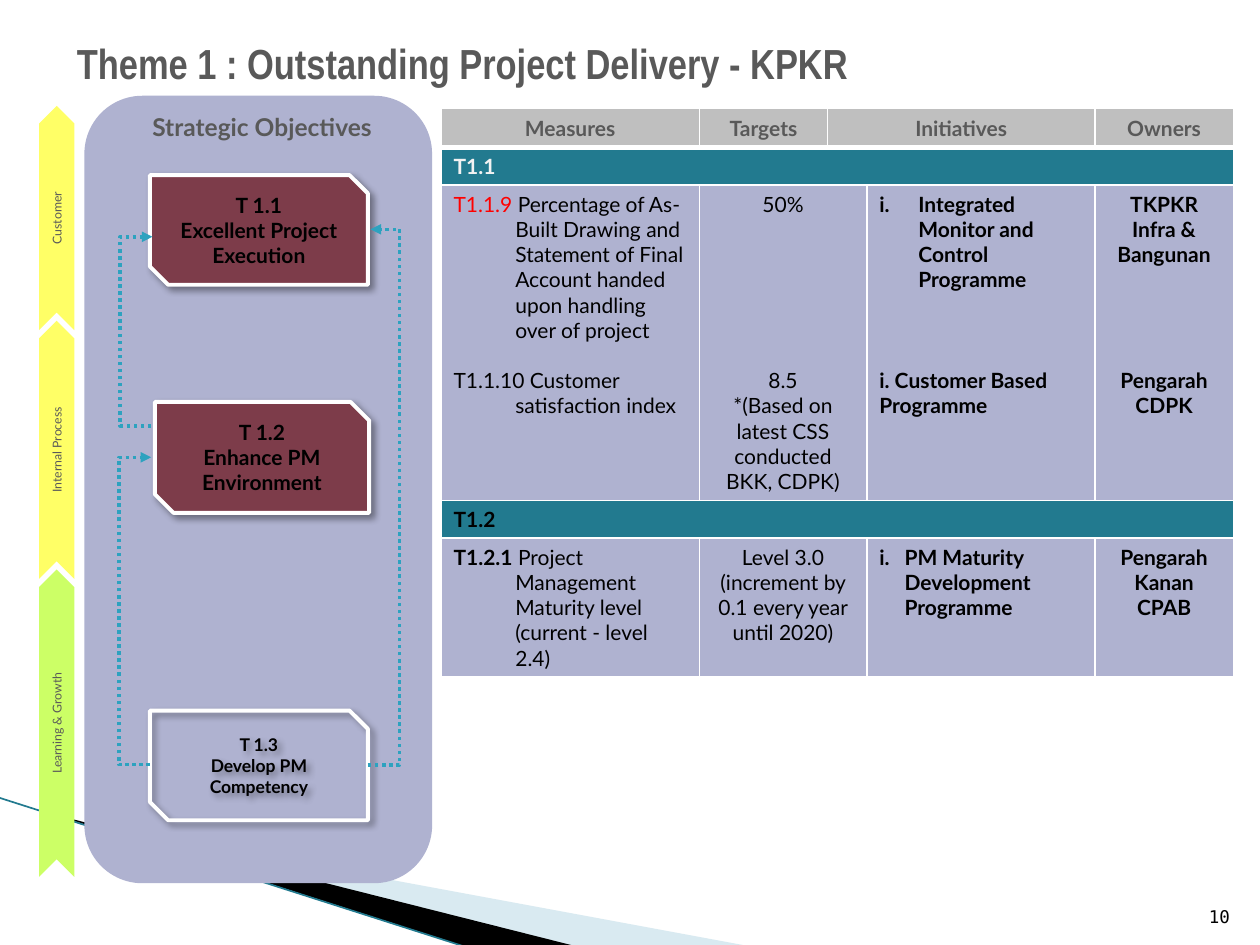
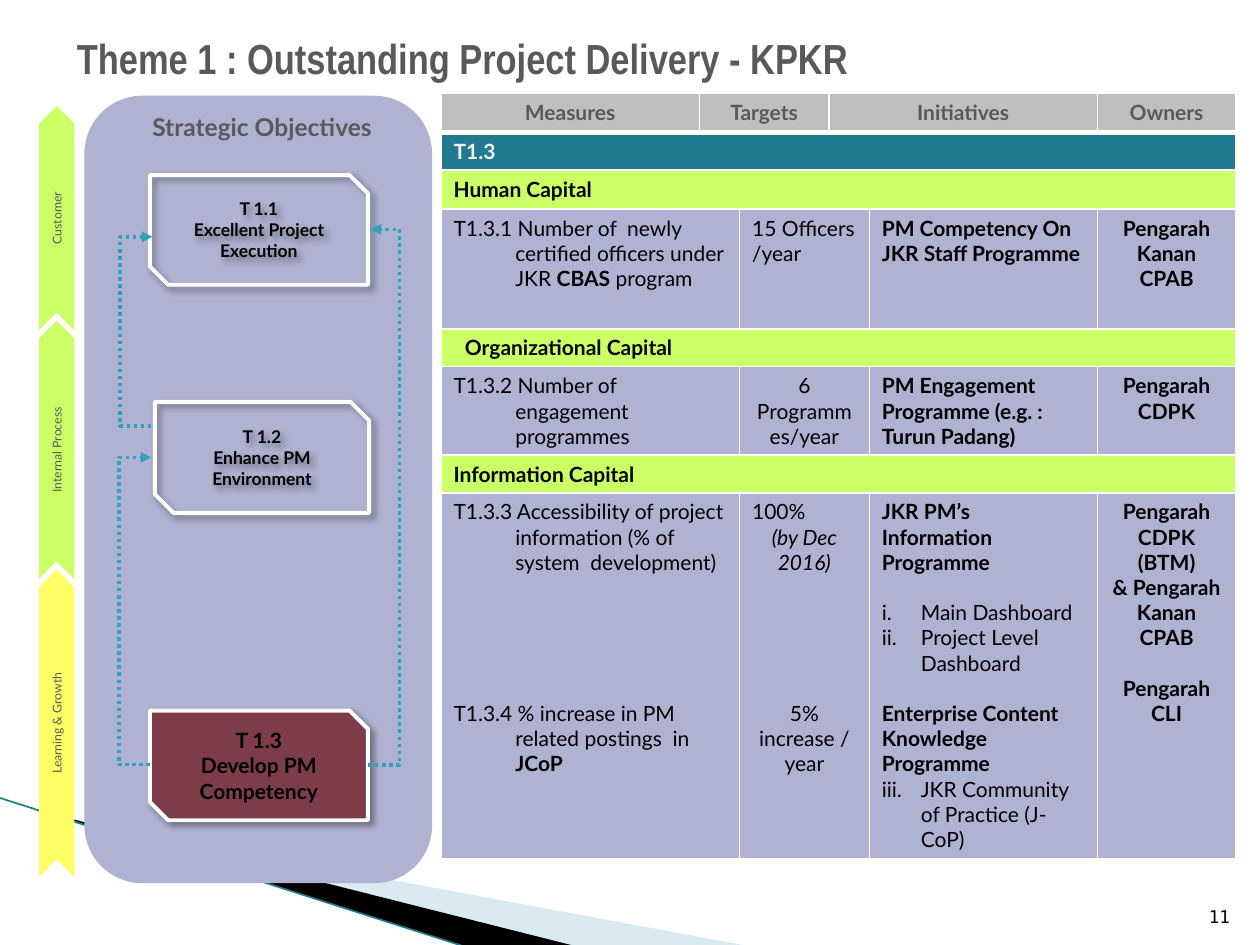
from dataclasses import dataclass

from lxml.etree import SubElement
from pptx import Presentation
from pptx.dml.color import RGBColor
from pptx.enum.dml import MSO_LINE
from pptx.enum.shapes import MSO_CONNECTOR, MSO_SHAPE
from pptx.enum.text import MSO_ANCHOR, MSO_AUTO_SIZE, PP_ALIGN
from pptx.oxml.ns import qn
from pptx.util import Inches, Pt

COLORS = {
    "white": "FFFFFF", "black": "000000", "grey": "595959", "pale": "F2F2F2",
    "red": "FF0000", "header": "BFBFBF", "theme": "227A8F", "group": "CCFF66",
    "body": "AFB2D0", "active": "7D3C4A", "yellow": "FFFF66", "green": "CCFF66",
    "arrow": "2DA2BF", "sweep": "A0CBDC",
}
FONT, TITLE_FONT, NUMBER_FONT = "Lato", "Arial Narrow", "DejaVu Sans Mono"
LEFT, CENTER, RIGHT = PP_ALIGN.LEFT, PP_ALIGN.CENTER, PP_ALIGN.RIGHT
LINE_HEIGHT = 14.4
TITLE = "Theme 1 : Outstanding Project Delivery - KPKR"
PANEL_TITLE = "Strategic Objectives"


@dataclass
class Line:
    runs: list
    align: object = LEFT
    hang: float = 0
    margin: float = 0
    gap: int = 0
    number: int = 0


def measure(*runs, gap=0):
    return Line([run if isinstance(run, tuple) else (run, "") for run in runs], hang=0.49, gap=gap)


def plain(text, align=CENTER, gap=0, style=""):
    return Line([(text, style)], align, gap=gap)


def strong(text, align=LEFT, gap=0):
    return plain(text, align, gap, "bold")


def numbered(text, number=1, hang=0.31, gap=0, style=""):
    return Line([(text, style)], hang=hang, gap=gap, number=number)


def band(text, color="black", margin=0):
    return [Line([(text, "bold " + color)], margin=margin)]


HEADINGS = [[plain(name, style="bold grey")] for name in ("Measures", "Targets", "Initiatives", "Owners")]

OBJECTIVES = [
    ("T 1.1", "Excellent Project Execution", (1.19, 1.39, 1.73, 0.87)),
    ("T 1.2", "Enhance PM Environment", (1.23, 3.19, 1.7, 0.88)),
    ("T 1.3", "Develop PM Competency", (1.19, 5.64, 1.73, 0.87)),
]
PERSPECTIVES = [
    ("Customer", 1.73, 1.78),
    ("Internal Process", 3.57, 2.05),
    ("Learning & Growth", 5.74, 2.44),
]
LINKS = [
    ((1.2, 3.38), (1.21, 1.88), 0.95),
    ((2.92, 6.07), (2.94, 1.82), 3.17),
    ((1.19, 6.07), (1.2, 3.63), 0.94),
]
SWEEPS = [
    ("sweep", 40, [(0.55, 6.51), (5.95, 7.51), (4.56, 7.51), (0.55, 6.5)]),
    ("black", 100, [(0.53, 6.49), (4.57, 7.51), (3.72, 7.52), (0.54, 6.5)]),
]

SLIDES = [
    {
        "number": "10", "title_top": 0.25, "table_top": 0.86, "active": {0, 1},
        "columns": [2.05, 1.02, 0.31, 1.81, 1.1],
        "rows": [
            ("header", 0.31, [1, 1, 2, 1], HEADINGS),
            ("theme", 0.29, [5], [band("T1.1", "pale")]),
            ("body", 2.5, [1, 2, 1, 1], [
                [measure(("T1.1.9 ", "red"), "Percentage of As-Built Drawing and Statement of Final "
                         "Account handed upon handling over of project"),
                 measure("T1.1.10 Customer satisfaction index", gap=1)],
                [plain("50%"), plain("8.5", gap=6),
                 plain("*(Based on latest CSS conducted BKK, CDPK)")],
                [numbered("Integrated Monitor and Control Programme", style="bold"),
                 strong("i. Customer Based Programme", gap=3)],
                [strong("TKPKR Infra & Bangunan", CENTER), strong("Pengarah CDPK", CENTER, 4)],
            ]),
            ("theme", 0.3, [5], [band("T1.2")]),
            ("body", 1.09, [1, 2, 1, 1], [
                [measure(("T1.2.1", "bold"), " Project Management Maturity level (current - level 2.4)")],
                [plain("Level 3.0"), plain("(increment by 0.1 every year until 2020)")],
                [numbered("PM Maturity Development Programme", hang=0.2, style="bold")],
                [strong("Pengarah Kanan CPAB", CENTER)],
            ]),
        ],
    },
    {
        "number": "11", "title_top": 0.21, "table_top": 0.74, "active": {2},
        "columns": [2.05, 0.32, 0.71, 0.32, 1.81, 1.1],
        "rows": [
            ("header", 0.31, [1, 2, 2, 1], HEADINGS),
            ("theme", 0.29, [6], [band("T1.3", "pale")]),
            ("group", 0.31, [6], [band("Human Capital")]),
            ("body", 0.95, [2, 2, 1, 1], [
                [measure("T1.3.1 Number of  newly certified officers under JKR ",
                         ("CBAS", "bold"), " program")],
                [plain("15 Officers /year", LEFT)],
                [strong("PM Competency On JKR Staff Programme")],
                [strong("Pengarah Kanan CPAB", CENTER)],
            ]),
            ("group", 0.3, [6], [band("Organizational Capital", margin=0.09)]),
            ("body", 0.7, [2, 2, 1, 1], [
                [measure("T1.3.2 Number of engagement programmes")],
                [plain("6 Programmes/year")],
                [strong("PM Engagement Programme (e.g. : Turun Padang)")],
                [strong("Pengarah CDPK", CENTER)],
            ]),
            ("group", 0.3, [6], [band("Information Capital")]),
            ("body", 2.9, [2, 2, 1, 1], [
                [measure("T1.3.3 Accessibility of project information (% of system  development)"),
                 measure("T1.3.4 % increase in PM related postings  in ", ("JCoP", "bold"), gap=5)],
                [plain("100%", LEFT), plain("(by Dec 2016)", style="italic"),
                 plain("5% increase / year", gap=5)],
                [strong("JKR PM’s Information Programme"),
                 numbered("Main Dashboard", gap=1), numbered("Project Level Dashboard"),
                 strong("Enterprise Content Knowledge Programme", gap=1),
                 numbered("JKR Community of Practice (J-CoP)", 3)],
                [strong("Pengarah CDPK (BTM)", CENTER), strong("& Pengarah Kanan CPAB", CENTER),
                 strong("Pengarah CLI", CENTER, 1)],
            ]),
        ],
    },
]


def rgb(name):
    return RGBColor.from_string(COLORS[name])


def fill_with(target, name):
    target.fill.solid()
    target.fill.fore_color.rgb = rgb(name)


def write(frame, lines, size, font=FONT):
    for index, line in enumerate(lines):
        paragraph = frame.paragraphs[0] if index == 0 else frame.add_paragraph()
        paragraph.alignment = line.align
        properties = paragraph._p.get_or_add_pPr()
        properties.set("marL", str(Inches(line.hang + line.margin)))
        properties.set("indent", str(-Inches(line.hang)))
        if line.number:
            SubElement(properties, qn("a:buAutoNum"), type="romanLcPeriod", startAt=str(line.number))
        if line.gap:
            paragraph.space_before = Pt(line.gap * LINE_HEIGHT)
        for text, style in line.runs:
            run = paragraph.add_run()
            run.text = text
            words = style.split()
            run.font.name, run.font.size = font, Pt(size)
            run.font.bold, run.font.italic = "bold" in words, "italic" in words
            run.font.color.rgb = rgb(next((word for word in words if word in COLORS), "black"))


def add_text(slide, box, line, size, font=FONT, anchor=MSO_ANCHOR.TOP):
    frame = slide.shapes.add_textbox(*map(Inches, box)).text_frame
    frame.word_wrap = True
    frame.vertical_anchor = anchor
    write(frame, [line], size, font)


def add_block(slide, kind, box, color=None):
    shape = slide.shapes.add_shape(kind, *map(Inches, box))
    shape.shadow.inherit = False
    shape.line.fill.background()
    if color:
        fill_with(shape, color)
    else:
        shape.fill.background()
    shape.text_frame.word_wrap = True
    shape.text_frame.vertical_anchor = MSO_ANCHOR.MIDDLE
    return shape


def add_alpha(color_element, percent):
    SubElement(color_element, qn("a:alpha"), val=str(percent * 1000))


def add_line(slide, kind, start, end, color, width):
    connector = slide.shapes.add_connector(kind, *map(Inches, start + end))
    connector.line.color.rgb = rgb(color)
    connector.line.width = Pt(width)
    SubElement(connector._element.spPr, qn("a:effectLst"))
    return connector


def add_sweeps(slide):
    for color, opacity, points in SWEEPS:
        corners = [(Inches(x), Inches(y)) for x, y in points]
        builder = slide.shapes.build_freeform(*corners[0], scale=1.0)
        builder.add_line_segments(corners[1:])
        shape = builder.convert_to_shape()
        shape.shadow.inherit = False
        shape.line.fill.background()
        fill_with(shape, color)
        add_alpha(shape._element.spPr.find(".//" + qn("a:srgbClr")), opacity)
    add_line(slide, MSO_CONNECTOR.STRAIGHT, (-0.01, 6.33), (3.71, 7.52), "theme", 0.95)


def add_objective(slide, code, name, box, active):
    shape = add_block(slide, MSO_SHAPE.SNIP_2_DIAG_RECTANGLE, box, "active" if active else None)
    shape.line.color.rgb = rgb("white")
    shape.line.width = Pt(2.25)
    effects = shape._element.spPr.find(qn("a:effectLst"))
    shadow = SubElement(effects, qn("a:outerShdw"), blurRad=str(Pt(4)), dist=str(Pt(3)),
                        dir="2700000", algn="tl", rotWithShape="0")
    add_alpha(SubElement(shadow, qn("a:srgbClr"), val=COLORS["black"]), 40)
    write(shape.text_frame, [strong(code, CENTER), strong(name, CENTER)], 12 if active else 10)


def add_perspective(slide, name, middle, length, active):
    thickness = 0.28
    box = (0.45 - length / 2, middle - thickness / 2, length, thickness)
    shape = add_block(slide, MSO_SHAPE.CHEVRON, box, "yellow" if active else "green")
    shape.rotation = 270
    frame = shape.text_frame
    frame.margin_left = frame.margin_right = frame.margin_top = frame.margin_bottom = 0
    write(frame, [plain(name, style="grey")], 7)


def add_link(slide, start, end, turn):
    connector = add_line(slide, MSO_CONNECTOR.ELBOW, start, end, "arrow", 2)
    connector.line.dash_style = MSO_LINE.ROUND_DOT
    SubElement(connector.line._get_or_add_ln(), qn("a:tailEnd"), type="triangle")
    guides = connector._element.spPr.find(qn("a:prstGeom")).get_or_add_avLst()
    share = round((turn - start[0]) / (end[0] - start[0]) * 100000)
    SubElement(guides, qn("a:gd"), name="adj1", fmla=f"val {share}")


def add_borders(cell, bottom):
    properties = cell._tc.get_or_add_tcPr()
    for index, (side, width) in enumerate((("L", 1), ("R", 1), ("T", 1), ("B", bottom))):
        border = SubElement(properties, qn("a:ln" + side), w=str(Pt(width)))
        SubElement(SubElement(border, qn("a:solidFill")), qn("a:srgbClr"), val=COLORS["white"])
        properties.insert(index, border)


def add_scorecard(slide, top, columns, rows):
    height = sum(row[1] for row in rows)
    box = (3.5, top, sum(columns), height)
    table = slide.shapes.add_table(len(rows), len(columns), *map(Inches, box)).table
    table.first_row = table.horz_banding = False
    for column, width in zip(table.columns, columns):
        column.width = Inches(width)
    for row_index, (kind, row_height, spans, contents) in enumerate(rows):
        table.rows[row_index].height = Inches(row_height)
        for cell in table.rows[row_index].cells:
            fill_with(cell, kind)
            add_borders(cell, 3 if kind == "header" else 1)
        column_index = 0
        for span, lines in zip(spans, contents):
            cell = table.cell(row_index, column_index)
            if span > 1:
                cell.merge(table.cell(row_index, column_index + span - 1))
            cell.vertical_anchor = MSO_ANCHOR.MIDDLE if kind == "header" else MSO_ANCHOR.TOP
            write(cell.text_frame, lines, 12)
            column_index += span


def add_title(slide, top):
    title = slide.shapes.title
    title.left, title.top, title.width, title.height = map(Inches, (0.51, top, 9.13, 0.5))
    title.text_frame.auto_size = MSO_AUTO_SIZE.NONE
    title.text_frame.vertical_anchor = MSO_ANCHOR.TOP
    write(title.text_frame, [plain(TITLE, LEFT, style="bold grey")], 24, TITLE_FONT)


def build_slide(presentation, content):
    slide = presentation.slides.add_slide(presentation.slide_layouts[5])
    add_sweeps(slide)
    add_title(slide, content["title_top"])
    add_block(slide, MSO_SHAPE.ROUNDED_RECTANGLE, (0.67, 0.76, 2.76, 6.25), "body")
    add_text(slide, (0.94, 0.84, 2.28, 0.34), plain(PANEL_TITLE, style="bold grey"), 14)
    add_scorecard(slide, content["table_top"], content["columns"], content["rows"])
    for index, (objective, perspective) in enumerate(zip(OBJECTIVES, PERSPECTIVES)):
        active = index in content["active"]
        add_objective(slide, *objective, active)
        add_perspective(slide, *perspective, active)
    for link in LINKS:
        add_link(slide, *link)
    add_text(slide, (9.46, 7.01, 0.4, 0.4), plain(content["number"], RIGHT), 10, NUMBER_FONT, MSO_ANCHOR.BOTTOM)


def main():
    presentation = Presentation()
    presentation.slide_width, presentation.slide_height = Inches(10), Inches(7.5)
    for content in SLIDES:
        build_slide(presentation, content)
    presentation.save("out.pptx")


if __name__ == "__main__":
    main()
